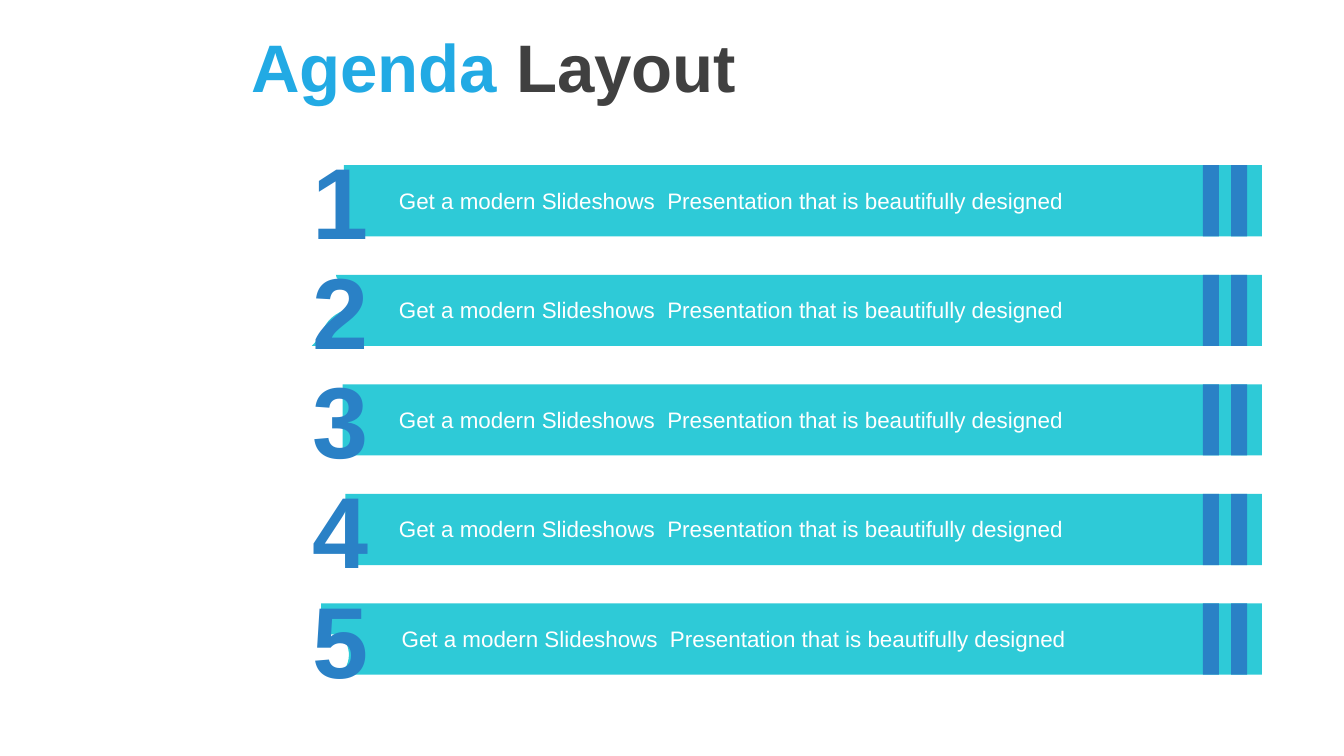
from pptx import Presentation
from pptx import util as u
from pptx.dml.color import RGBColor
from pptx.enum import shapes as sh, text as tx

TEAL, BLUE, SKY, GREY, WHITE = "2ECAD7", "2A81C6", "22AAE4", "404040", "FFFFFF"
FONT = "Arial"
LABEL = "Get a modern Slideshows  Presentation that is beautifully designed"
TOP, LAST, ROWS = 1.23, 4.49, 5
RIGHT, HIGH = 9.39, 0.53


def color(code):
    """Turn a hex string into a colour."""
    return RGBColor.from_string(code)


def paint(shape, code):
    """Give a shape a flat fill with no line or shadow."""
    shape.shadow.inherit = False
    shape.fill.solid()
    shape.fill.fore_color.rgb = color(code)
    shape.line.fill.background()


def block(slide, x, y, w, code):
    """Draw a rectangle as high as a bar."""
    box = slide.shapes.add_shape(sh.MSO_SHAPE.RECTANGLE, *map(u.Inches, (x, y, w, HIGH)))
    paint(box, code)


def curve(a, b, c, d, steps=12):
    """List points along a cubic curve, leaving out its start."""
    points = []
    for n in range(1, steps + 1):
        t = n / steps
        s = 1 - t
        points.append(tuple(
            s**3 * p + 3 * s * s * t * q + 3 * s * t * t * r + t**3 * v
            for p, q, r, v in zip(a, b, c, d)))
    return points


def outline(slide, points, y, code):
    """Draw a closed outline whose heights count from y."""
    spots = [(u.Inches(px), u.Inches(y + py)) for px, py in points]
    form = slide.shapes.build_freeform(*spots[0])
    form.add_line_segments(spots[1:], close=True)
    paint(form.convert_to_shape(), code)


def words(slide, place, runs, size, bold=False, align="LEFT", anchor="MIDDLE"):
    """Add one line of text made of (text, colour) runs."""
    box = slide.shapes.add_textbox(*map(u.Inches, place))
    frame = box.text_frame
    form = {"word_wrap": True, "vertical_anchor": getattr(tx.MSO_ANCHOR, anchor)}
    for key, value in form.items():
        setattr(frame, key, value)
    para = frame.paragraphs[0]
    para.alignment = getattr(tx.PP_ALIGN, align)
    for part, code in runs:
        run = para.add_run()
        run.text = part
        for key, value in {"name": FONT, "size": u.Pt(size), "bold": bold}.items():
            setattr(run.font, key, value)
        run.font.color.rgb = color(code)


def bars():
    """Give each bar its left edge, or its outline if it is notched."""
    two = [(2.5, 0), (RIGHT, 0), (RIGHT, HIGH), (2.32, HIGH)]
    two += curve((2.32, HIGH), (2.41, 0.45), (2.39, 0.33), (2.57, 0.26))
    two += curve((2.57, 0.26), (2.74, 0.1), (2.5, 0.08), (2.5, 0))
    five = [(2.39, 0), (RIGHT, 0), (RIGHT, HIGH), (2.54, HIGH)]
    five += curve((2.54, HIGH), (2.61, 0.44), (2.62, 0.34), (2.54, 0.23))
    five += [(2.39, 0.23)]
    return [2.56, two, 2.55, 2.57, five]


def main():
    """Build the agenda slide."""
    deck = Presentation()
    deck.slide_width = u.Inches(10)
    deck.slide_height = u.Inches(10 * 9 / 16)
    slide = deck.slides.add_slide(deck.slide_layouts[6])
    tops = [TOP + (LAST - TOP) / (ROWS - 1) * n for n in range(ROWS)]
    for y, bar in zip(tops, bars()):
        if isinstance(bar, list):
            outline(slide, bar, y, TEAL)
        else:
            block(slide, bar, y, RIGHT - bar, TEAL)
        for x in (9.16, 8.95):
            block(slide, x, y, 0.12, BLUE)
    words(slide, (1.77, 0, 8.23, 0.97), [("Agenda ", SKY), ("Layout", GREY)], 36, True)
    for n, y in enumerate(tops, 1):
        words(slide, (2.23, y - 0.25, 0.49, 1.01), [(str(n), BLUE)], 54, True, "CENTER")
        left = 2.89 if n == ROWS else 2.87
        words(slide, (left, y + 0.11, 5.47, 0.3), [(LABEL, WHITE)], 12, anchor="TOP")
    deck.save("out.pptx")


if __name__ == "__main__":
    main()
